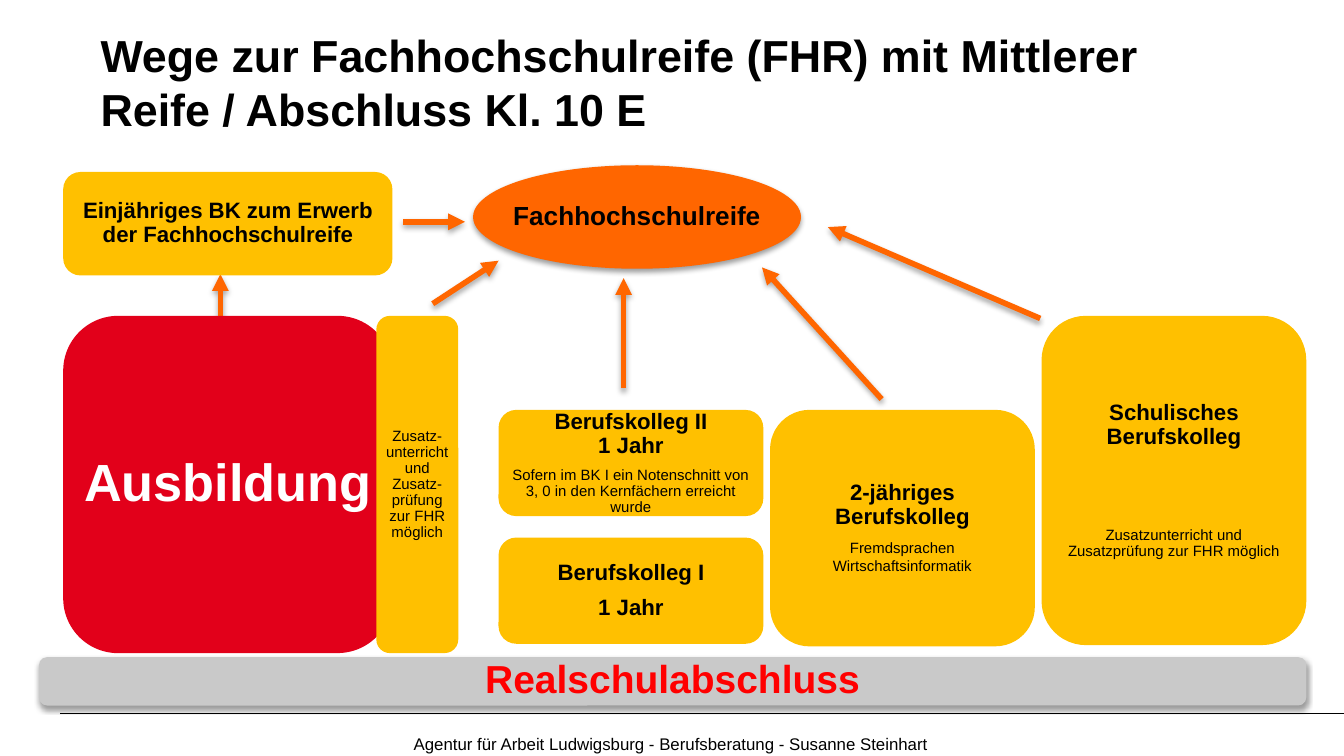
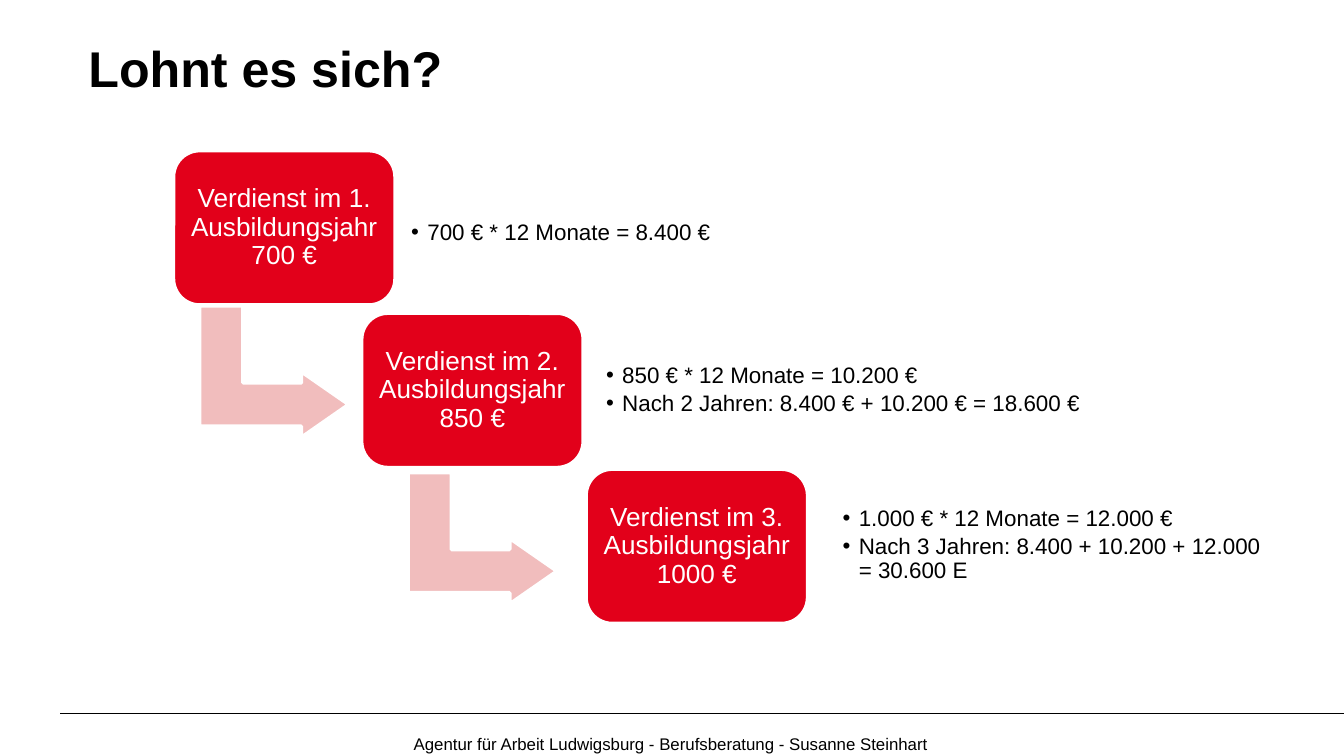
"""Build two slides on school paths and training pay."""
import lxml.etree
import pptx
import pptx.dml.color
import pptx.enum.shapes
import pptx.enum.text
import pptx.oxml.ns
import pptx.util

Inches = pptx.util.Inches
Pt = pptx.util.Pt
RGB = pptx.dml.color.RGBColor.from_string
Kind = pptx.enum.shapes.MSO_SHAPE
Link = pptx.enum.shapes.MSO_CONNECTOR
Align = pptx.enum.text.PP_ALIGN
Anchor = pptx.enum.text.MSO_ANCHOR
add = lxml.etree.SubElement
qn = pptx.oxml.ns.qn


class Theme:
    font = "Arial"
    black = RGB("000000")
    white = RGB("FFFFFF")
    red = RGB("E2001A")
    pure = RGB("FF0000")
    pink = RGB("F1BDBD")
    gold = RGB("FFC000")
    orange = RGB("FF6600")
    gray = RGB("C9C9C9")
    foot = 9
    head = 11.9
    small = 8
    goal = 14
    base = 20.9
    huge = 28
    step = 14
    item = 12


def shade(shape, alpha=0):
    effects = add(shape._element.spPr, qn("a:effectLst"))
    if alpha:
        outer = add(effects, qn("a:outerShdw"), blurRad=str(Pt(3.1)), dist=str(Pt(1.7)),
                    dir="5400000", algn="ctr", rotWithShape="0")
        color = add(outer, qn("a:srgbClr"), val=str(Theme.black))
        add(color, qn("a:alpha"), val=str(alpha * 1000))


def write(shape, lines, color=Theme.black, inset=None, align=Align.LEFT,
          anchor=Anchor.TOP, wrap=True, space=None, after=0, bullet=False):
    frame = shape.text_frame
    frame.word_wrap = wrap
    frame.vertical_anchor = anchor
    if inset is not None:
        frame.margin_left = frame.margin_right = Inches(inset)
        frame.margin_top = frame.margin_bottom = Inches(inset)
    for i, (text, size, bold, before) in enumerate(lines):
        para = frame.add_paragraph() if i else frame.paragraphs[0]
        para.text = text
        para.alignment = align
        para.line_spacing = space
        para.space_before = Pt(before)
        para.space_after = Pt(after)
        if bullet:
            props = para._p.get_or_add_pPr()
            props.set("marL", str(Inches(0.12)))
            props.set("indent", str(-Inches(0.12)))
            add(props, qn("a:buFont"), typeface=Theme.font)
            add(props, qn("a:buChar"), char="•")
        para.font.name = Theme.font
        para.font.size = Pt(size)
        para.font.bold = bold
        para.font.color.rgb = color


deck = pptx.Presentation()
deck.slide_width = Inches(10)
deck.slide_height = deck.slide_width * 9 // 16

titles = [
    ("Wege zur Fachhochschulreife (FHR) mit Mittlerer Reife / Abschluss Kl. 10 E",
     24, (0.65, 0.16, 9, 0.94)),
    ("Lohnt es sich?", 26.9, (0.56, 0.23, 9.24, 0.78)),
]
for title, size, spot in titles:
    slide = deck.slides.add_slide(deck.slide_layouts[6])
    rule = slide.shapes.add_connector(Link.STRAIGHT, Inches(0.45), Inches(5.31),
                                      Inches(10), Inches(5.31))
    rule.line.color.rgb = Theme.black
    rule.line.width = Pt(0.5)
    shade(rule)
    head = slide.shapes.add_textbox(*map(Inches, spot))
    write(head, [(title, size, True, 0)], after=3.7)
    foot = slide.shapes.add_textbox(*map(Inches, (2.98, 5.41, 6.16, 0.21)))
    write(foot, [("Agentur für Arbeit Ludwigsburg - Berufsberatung - Susanne Steinhart",
                  Theme.foot, False, 0)])

paths, pay = deck.slides

arrows = [
    (1.64, 2.86, 1.64, 2.04),
    (4.64, 2.89, 4.64, 2.07),
    (6.56, 2.97, 5.67, 1.99),
    (3, 1.65, 3.46, 1.65),
    (3.22, 2.26, 3.71, 1.94),
    (7.74, 2.37, 6.16, 1.69),
]
for ends in arrows:
    arrow = paths.shapes.add_connector(Link.STRAIGHT, *map(Inches, ends))
    arrow.line.color.rgb = Theme.orange
    arrow.line.width = Pt(3)
    add(arrow.line._get_or_add_ln(), qn("a:tailEnd"), type="triangle")
    shade(arrow, 35)

labels = [
    (Kind.ROUNDED_RECTANGLE, (0.47, 2.35, 2.45, 2.51), Theme.red, Theme.white, 0,
     "Ausbildung", Theme.huge),
    (Kind.ROUNDED_RECTANGLE, (0.29, 4.89, 9.43, 0.36), Theme.gray, Theme.pure, 38,
     "Realschulabschluss", Theme.base),
    (Kind.OVAL, (3.52, 1.23, 2.44, 0.77), Theme.orange, Theme.black, 38,
     "Fachhochschulreife", Theme.goal),
]
for kind, spot, fill, ink, alpha, text, size in labels:
    label = paths.shapes.add_shape(kind, *map(Inches, spot))
    label.fill.solid()
    label.fill.fore_color.rgb = fill
    label.line.fill.background()
    shade(label, alpha)
    write(label, [(text, size, True, 0)], ink, 0, Align.CENTER, Anchor.MIDDLE, False, 0.9)

schools = [
    ((0.47, 1.28, 2.45, 0.77),
     [("Einjähriges BK zum Erwerb der Fachhochschulreife", Theme.head, True, 0)]),
    ((3.71, 4, 1.97, 0.79),
     [("Berufskolleg I", Theme.head, True, 0), ("1 Jahr", Theme.head, True, 6)]),
    ((3.71, 3.05, 1.97, 0.79),
     [("Berufskolleg II\n1 Jahr", Theme.head, True, 0),
      ("Sofern im BK I ein Notenschnitt von 3, 0 in den Kernfächern erreicht wurde",
       Theme.small, False, 5)]),
    ((5.73, 3.05, 1.97, 1.76),
     [("2-jähriges\nBerufskolleg", Theme.head, True, 0),
      ("Fremdsprachen\nWirtschaftsinformatik", Theme.small, False, 5)]),
    ((7.75, 2.35, 1.97, 2.45),
     [("Schulisches\nBerufskolleg", Theme.head, True, 0),
      ("Zusatzunterricht und Zusatzprüfung zur FHR möglich", Theme.small, False, 42)]),
    ((2.8, 2.35, 0.61, 2.51),
     [("Zusatz-unterricht und Zusatz-prüfung zur FHR möglich", Theme.small, False, 0)]),
]
for spot, lines in schools:
    school = paths.shapes.add_shape(Kind.ROUNDED_RECTANGLE, *map(Inches, spot))
    school.fill.solid()
    school.fill.fore_color.rgb = Theme.gold
    school.line.fill.background()
    shade(school)
    write(school, lines, Theme.black, 0.03, Align.CENTER, Anchor.MIDDLE, True, 0.9)
    if "Fremdsprachen" in lines[-1][0]:
        school.text_frame.paragraphs[-1].line_spacing = 1.0

bent = (Kind.BENT_UP_ARROW, Theme.pink, (0.33, 0.25, 0.36), 90)
block = (Kind.ROUNDED_RECTANGLE, Theme.red, (0.17,), 0)
steps = [
    (1.29, 1.12, (1.55, 2.21), "700", (3.01, 1.27, 4.19, 0.93),
     ["700 € * 12 Monate = 8.400 €"]),
    (2.69, 2.33, (3.1, 3.45), "850", (4.46, 2.44, 5.03, 0.93),
     ["850 € * 12 Monate = 10.200 €", "Nach 2 Jahren: 8.400 € + 10.200 € = 18.600 €"]),
    (4.36, 3.49, None, "1000", (6.22, 3.59, 3.37, 0.93),
     ["1.000 € * 12 Monate = 12.000 €",
      "Nach 3 Jahren: 8.400 + 10.200 + 12.000\n= 30.600 E"]),
]
for year, (left, top, turn, wage, spot, sums) in enumerate(steps, 1):
    parts = [(bent, (*turn, 0.98, 1.11))] if turn else []
    parts.append((block, (left, top, 1.65, 1.15)))
    for (kind, fill, bends, angle), place in parts:
        part = pay.shapes.add_shape(kind, *map(Inches, place))
        for i, bend in enumerate(bends):
            part.adjustments[i] = bend
        part.rotation = angle
        part.fill.solid()
        part.fill.fore_color.rgb = fill
        part.line.color.rgb = Theme.white
        part.line.width = Pt(2)
        shade(part)
    write(part, [(f"Verdienst im {year}. Ausbildungsjahr {wage} €", Theme.step, False, 0)],
          Theme.white, 0.06, Align.CENTER, Anchor.MIDDLE, True, 0.9)
    notes = pay.shapes.add_textbox(*map(Inches, spot))
    write(notes, [(text, Theme.item, False, 0) for text in sums], inset=0.05,
          anchor=Anchor.MIDDLE, space=0.9, after=2, bullet=True)

deck.save("out.pptx")
